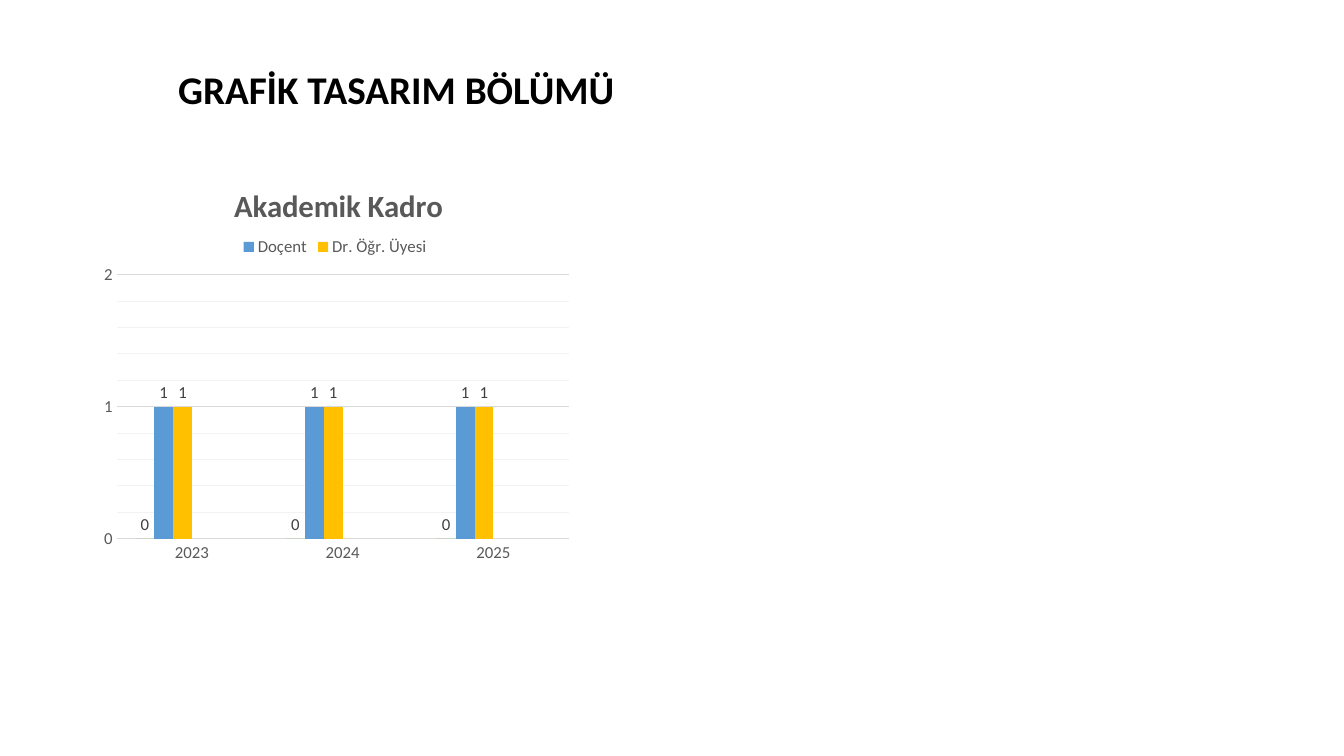
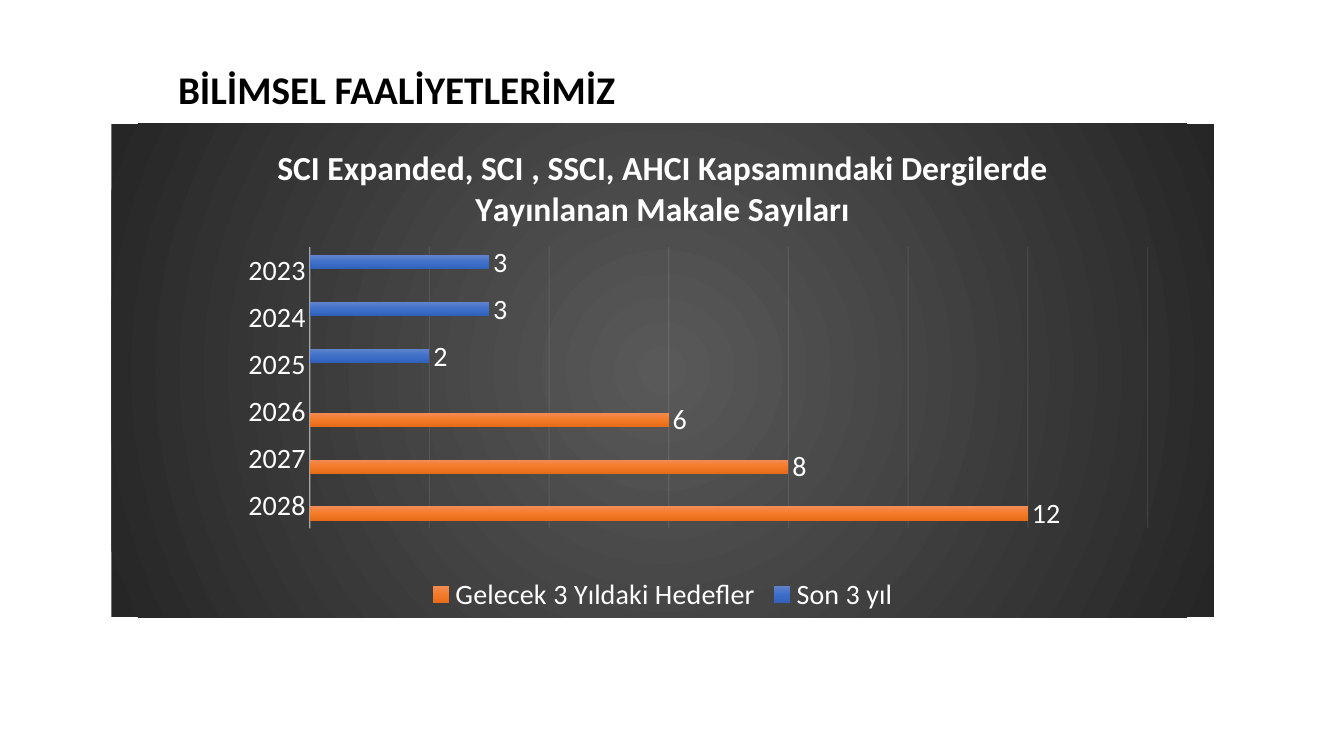
from pptx import Presentation
from pptx.chart.data import CategoryChartData
from pptx.dml.color import RGBColor
from pptx.enum.chart import XL_CHART_TYPE, XL_LABEL_POSITION, XL_LEGEND_POSITION, XL_TICK_MARK
from pptx.enum.text import MSO_ANCHOR, PP_ALIGN
from pptx.oxml import parse_xml
from pptx.oxml.ns import nsdecls, qn
from pptx.util import Pt

PX = 9525
FONT = "Calibri"
BLACK, WHITE = "000000", "FFFFFF"
GRAY, DARK_GRAY = "595959", "404040"
GRID, MINOR_GRID = "D9D9D9", "F2F2F2"
LINEAR = '<a:lin ang="5400000" scaled="0"/>'
RADIAL = ('<a:path path="circle"><a:fillToRect l="50000" t="50000" '
          'r="50000" b="50000"/></a:path>')


def px(*lengths):
    return [n * PX for n in lengths]


def rgb(color):
    return RGBColor.from_string(color)


def gradient(stops, direction):
    gs = "".join(f'<a:gs pos="{pos * 1000}"><a:srgbClr val="{color}"/></a:gs>'
                 for pos, color in stops)
    return parse_xml(f'<a:gradFill {nsdecls("a")} rotWithShape="1">'
                     f'<a:gsLst>{gs}</a:gsLst>{direction}</a:gradFill>')


def place(parent, index, target="", **fractions):
    for old in parent.findall(qn("c:layout")):
        parent.remove(old)
    inner = f'<c:layoutTarget val="{target}"/>' if target else ""
    modes = '<c:xMode val="edge"/><c:yMode val="edge"/>'
    sizes = "".join(f'<c:{key} val="{val}"/>' for key, val in fractions.items())
    parent.insert(index, parse_xml(
        f'<c:layout {nsdecls("c")}><c:manualLayout>{inner}{modes}{sizes}'
        '</c:manualLayout></c:layout>'))


class Deck:
    def __init__(self):
        self.prs = Presentation()
        self.prs.slide_width, self.prs.slide_height = px(1280, 720)
        self.s = None

    def font(self, font, size, color, bold=False):
        font.name, font.size, font.bold = FONT, Pt(size), bold
        font.color.rgb = rgb(color)

    def line(self, line, color, width=0.75, alpha=100):
        line.color.rgb = rgb(color)
        line.width = Pt(width)
        if alpha < 100:
            clr = line._get_or_add_ln().find(".//" + qn("a:srgbClr"))
            clr.append(parse_xml(f'<a:alpha {nsdecls("a")} val="{alpha * 1000}"/>'))

    def slide(self, title):
        self.s = self.prs.slides.add_slide(self.prs.slide_layouts[5])
        sp = self.s.shapes.title
        sp.left, sp.top, sp.width, sp.height = px(160, 38, 776, 98)
        tf = sp.text_frame
        tf.text = title
        tf.vertical_anchor = MSO_ANCHOR.MIDDLE
        p = tf.paragraphs[0]
        p.alignment, p.line_spacing = PP_ALIGN.LEFT, 0.9
        self.font(p.runs[0].font, 28, BLACK, True)

    def chart(self, kind, box, cats, series, title, title_size, size, color,
              label_color, gap, overlap, legend):
        data = CategoryChartData()
        data.categories = cats
        for name, values, _ in series:
            data.add_series(name, values)
        chart = self.s.shapes.add_chart(kind, *px(*box), data).chart
        self.font(chart.font, size, color)

        chart.has_title = True
        tf = chart.chart_title.text_frame
        tf.text = title
        self.font(tf.paragraphs[0].runs[0].font, title_size, color, True)
        chart.chart_title.include_in_layout = False

        chart.has_legend = True
        chart.legend.position = legend
        chart.legend.include_in_layout = False
        self.font(chart.legend.font, size, color)

        plot = chart.plots[0]
        plot.gap_width, plot.overlap, plot.vary_by_categories = gap, overlap, False
        for ser, (_, _, fill) in zip(plot.series, series):
            ser.invert_if_negative = False
            if isinstance(fill, str):
                ser.format.fill.solid()
                ser.format.fill.fore_color.rgb = rgb(fill)
            else:
                ser._element.get_or_add_spPr().insert(0, gradient(fill, LINEAR))
            labels = ser.data_labels
            labels.show_value = True
            labels.position = XL_LABEL_POSITION.OUTSIDE_END
            self.font(labels.font, size, label_color)
        for axis in (chart.category_axis, chart.value_axis):
            axis.major_tick_mark = axis.minor_tick_mark = XL_TICK_MARK.NONE
            self.font(axis.tick_labels.font, size, color)
        return chart

    def scale(self, axis, top, unit, color, alpha=100):
        axis.minimum_scale, axis.maximum_scale, axis.major_unit = 0, top, unit
        axis.has_major_gridlines = True
        self.line(axis.major_gridlines.format.line, color, alpha=alpha)

    def minor_grid(self, axis, unit, color):
        axis.minor_unit = unit
        axis.has_minor_gridlines = True
        axis._element.find(qn("c:minorGridlines")).append(parse_xml(
            f'<c:spPr {nsdecls("c", "a")}><a:ln w="{Pt(0.75)}"><a:solidFill>'
            f'<a:srgbClr val="{color}"/></a:solidFill></a:ln></c:spPr>'))


def staff_slide(deck):
    deck.slide("GRAFİK TASARIM BÖLÜMÜ")
    empty = (None,) * 3
    series = [("Series 1", (0, 0, 0), "70AD47"),
              ("Doçent", (1, 1, 1), "5B9BD5"),
              ("Dr. Öğr. Üyesi", (1, 1, 1), "FFC000"),
              ("Series 4", empty, "43682B"),
              ("Series 5", empty, "255E91"),
              ("Series 6", empty, "997300")]
    chart = deck.chart(XL_CHART_TYPE.COLUMN_CLUSTERED, (88, 146, 463, 399),
                       ("2023", "2024", "2025"), series, "Akademik Kadro", 22,
                       12, GRAY, DARK_GRAY, 199, 0, XL_LEGEND_POSITION.TOP)
    deck.line(chart.category_axis.format.line, GRID)
    axis = chart.value_axis
    deck.scale(axis, 2, 1, GRID)
    deck.minor_grid(axis, 0.2, MINOR_GRID)
    axis.format.line.fill.background()

    legend = chart.legend._element
    hidden = (0, 3, 4, 5)
    for n, idx in enumerate(hidden, 1):
        legend.insert(n, parse_xml(f'<c:legendEntry {nsdecls("c")}><c:idx val="{idx}"/>'
                                   '<c:delete val="1"/></c:legendEntry>'))
    place(legend, len(hidden) + 1, x=0.3, y=0.19)
    place(chart.chart_title._element, 1, x=0.28, y=0.06)
    place(chart._chartSpace.chart.plotArea, 0, "inner", x=0.05, y=0.29, w=0.93, h=0.63)


def articles_slide(deck):
    deck.slide("BİLİMSEL FAALİYETLERİMİZ")
    empty = (None,) * 3
    blue = ((0, "6183CB"), (50, "3E70CA"), (100, "3062BB"))
    orange = ((0, "F18C57"), (50, "F67B28"), (100, "E56C19"))
    series = [("Son 3 yıl", (3, 3, 2) + empty, blue),
              ("Gelecek 3 Yıldaki Hedefler", empty + (6, 8, 12), orange)]
    chart = deck.chart(XL_CHART_TYPE.BAR_CLUSTERED, (106, 118, 1050, 470),
                       [str(year) for year in range(2023, 2029)], series,
                       "SCI Expanded, SCI , SSCI, AHCI Kapsamındaki Dergilerde "
                       "Yayınlanan Makale Sayıları", 24,
                       20, WHITE, WHITE, 115, -20, XL_LEGEND_POSITION.BOTTOM)
    chart.category_axis.reverse_order = True
    deck.line(chart.category_axis.format.line, MINOR_GRID, 1, 54)
    deck.scale(chart.value_axis, 14, 2, MINOR_GRID, 10)
    chart.value_axis.visible = False
    place(chart._chartSpace.chart.plotArea, 0, "inner", x=0.18, y=0.25, w=0.76, h=0.57)

    background = parse_xml(f'<c:spPr {nsdecls("c", "a")}><a:ln><a:noFill/></a:ln></c:spPr>')
    background.insert(0, gradient(((0, "595959"), (100, "262626")), RADIAL))
    chart._chartSpace.chart.addnext(background)


def main():
    deck = Deck()
    staff_slide(deck)
    articles_slide(deck)
    deck.prs.save("out.pptx")


if __name__ == "__main__":
    main()
